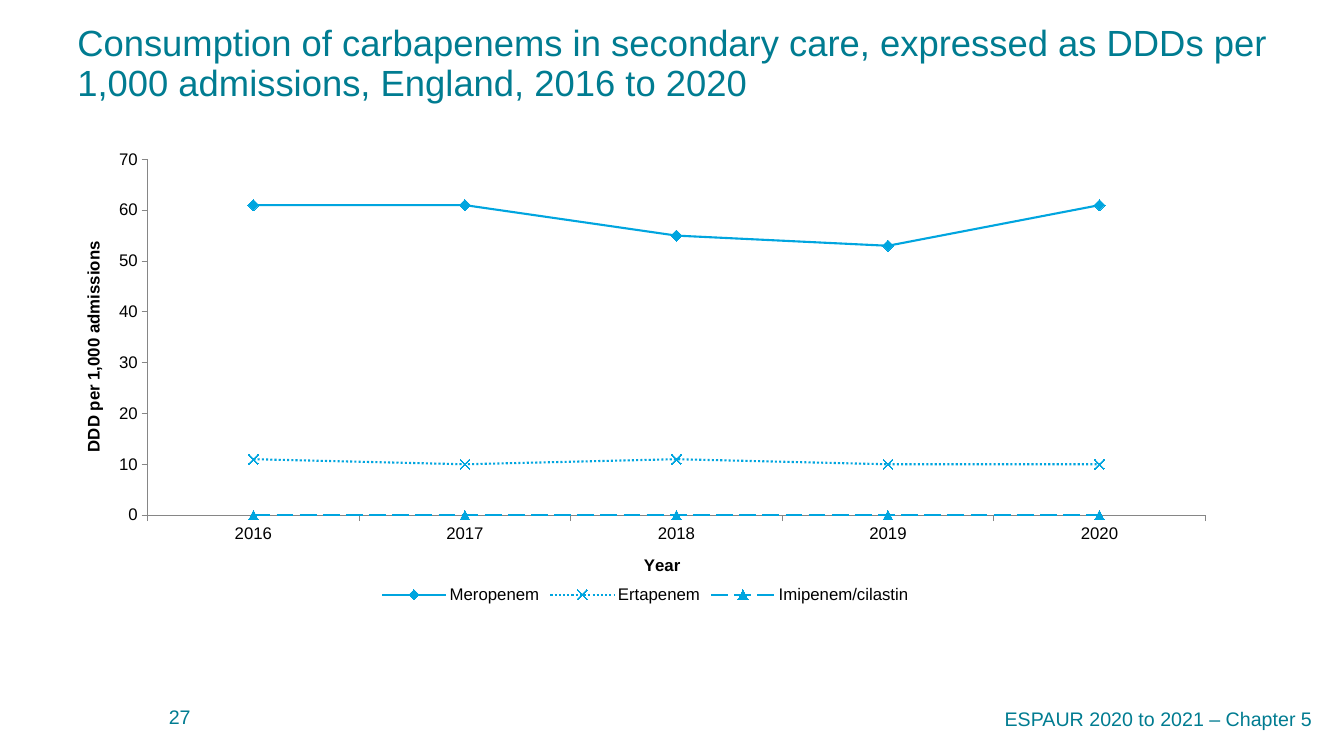
from lxml import etree
from pptx import Presentation
from pptx.chart.data import CategoryChartData
from pptx.dml.color import RGBColor
from pptx.enum.chart import XL_CHART_TYPE, XL_LEGEND_POSITION, XL_MARKER_STYLE, XL_TICK_MARK
from pptx.enum.dml import MSO_LINE
from pptx.enum.text import MSO_ANCHOR, PP_ALIGN
from pptx.oxml.ns import qn
from pptx.util import Pt

TEAL = RGBColor(0x00, 0x7C, 0x91)
BLUE = RGBColor(0x00, 0xA5, 0xDF)
GREY = RGBColor(0x86, 0x86, 0x86)
BLACK = RGBColor(0x00, 0x00, 0x00)

YEARS = ["2016", "2017", "2018", "2019", "2020"]
# Name, DDDs per 1,000 admissions by year, marker, marker size, line dash
CARBAPENEMS = [
    ("Meropenem", (61, 61, 55, 53, 61), XL_MARKER_STYLE.DIAMOND, 8, MSO_LINE.SOLID),
    ("Ertapenem", (11, 10, 11, 10, 10), XL_MARKER_STYLE.X, 7, MSO_LINE.ROUND_DOT),
    ("Imipenem/cilastin", (0, 0, 0, 0, 0), XL_MARKER_STYLE.TRIANGLE, 7, MSO_LINE.LONG_DASH),
]


class SlideBuilder:
    font_name = "Arial"

    def __init__(self, slide):
        self.slide = slide

    def style(self, font, size, color, bold=False):
        font.name = self.font_name
        font.size = Pt(size)
        font.bold = bold
        font.color.rgb = color

    def title(self, text, left, top, width, height):
        shape = self.slide.shapes.title
        shape.left, shape.top, shape.width, shape.height = map(Pt, (left, top, width, height))
        text_frame = shape.text_frame
        text_frame.text = text
        text_frame.vertical_anchor = MSO_ANCHOR.TOP
        paragraph = text_frame.paragraphs[0]
        paragraph.alignment = PP_ALIGN.LEFT
        paragraph.line_spacing = 0.9
        self.style(paragraph.runs[0].font, 26, TEAL)

    def footer(self, text, left, top, width, height, alignment, indent=0):
        shape = self.slide.shapes.add_textbox(*map(Pt, (left, top, width, height)))
        text_frame = shape.text_frame
        text_frame.word_wrap = True
        text_frame.vertical_anchor = MSO_ANCHOR.MIDDLE
        text_frame.text = text
        paragraph = text_frame.paragraphs[0]
        paragraph.alignment = alignment
        if indent:
            paragraph._p.get_or_add_pPr().set("marL", str(Pt(indent)))
        self.style(paragraph.runs[0].font, 14, TEAL)

    def axis(self, axis, title):
        axis.has_major_gridlines = False
        axis.major_tick_mark = XL_TICK_MARK.OUTSIDE
        axis.minor_tick_mark = XL_TICK_MARK.NONE
        axis.format.line.color.rgb = GREY
        axis.format.line.width = Pt(0.75)
        text_frame = axis.axis_title.text_frame
        text_frame.text = title
        self.style(text_frame.paragraphs[0].runs[0].font, 12, BLACK, bold=True)

    def plot_layout(self, chart, **fractions):
        """Fix the inner plot area as fractions of the chart."""
        plot_area = chart._chartSpace.chart.plotArea
        for layout in plot_area.findall(qn("c:layout")):
            plot_area.remove(layout)
        layout = etree.Element(qn("c:layout"))
        manual = etree.SubElement(layout, qn("c:manualLayout"))
        settings = {"layoutTarget": "inner", "xMode": "edge", "yMode": "edge", **fractions}
        for name, value in settings.items():
            etree.SubElement(manual, qn(f"c:{name}")).set("val", str(value))
        plot_area.insert(0, layout)

    def line_chart(self, left, top, width, height):
        chart_data = CategoryChartData(number_format="0")
        chart_data.categories = YEARS
        for name, values, *_ in CARBAPENEMS:
            chart_data.add_series(name, values)
        chart = self.slide.shapes.add_chart(
            XL_CHART_TYPE.LINE_MARKERS, *map(Pt, (left, top, width, height)), chart_data
        ).chart
        self.style(chart.font, 12, BLACK)
        chart.has_title = False
        chart.has_legend = True
        chart.legend.position = XL_LEGEND_POSITION.BOTTOM
        chart.legend.include_in_layout = False
        self.axis(chart.category_axis, "Year")
        self.axis(chart.value_axis, "DDD per 1,000 admissions")
        chart.value_axis.minimum_scale = 0
        chart.value_axis.maximum_scale = 70
        chart.value_axis.major_unit = 10
        chart.value_axis.tick_labels.number_format = "0"
        chart.value_axis.tick_labels.number_format_is_linked = False
        self.plot_layout(chart, x=0.06, y=0.03, w=0.935, h=0.77)

        plot = chart.plots[0]
        plot.vary_by_categories = False
        for series, (_, _, marker, size, dash) in zip(plot.series, CARBAPENEMS):
            series.smooth = False
            series.format.line.color.rgb = BLUE
            series.format.line.width = Pt(1.5)
            series.format.line.dash_style = dash
            series.marker.style = marker
            series.marker.size = size
            series.marker.format.fill.solid()
            series.marker.format.fill.fore_color.rgb = BLUE
            series.marker.format.line.color.rgb = BLUE


def main():
    presentation = Presentation()
    presentation.slide_width = Pt(960)
    presentation.slide_height = Pt(540)
    builder = SlideBuilder(presentation.slides.add_slide(presentation.slide_layouts[5]))
    builder.title(
        "Consumption of carbapenems in secondary care, expressed as DDDs per "
        "1,000 admissions, England, 2016 to 2020",
        48, 14.5, 876, 76,
    )
    builder.line_chart(57, 104, 808, 330)
    builder.footer("ESPAUR 2020 to 2021 – Chapter 5", 10, 491, 934.5, 44.5, PP_ALIGN.RIGHT)
    builder.footer("27", 64, 497.5, 788, 29, PP_ALIGN.LEFT, indent=49.5)
    presentation.save("out.pptx")


if __name__ == "__main__":
    main()
